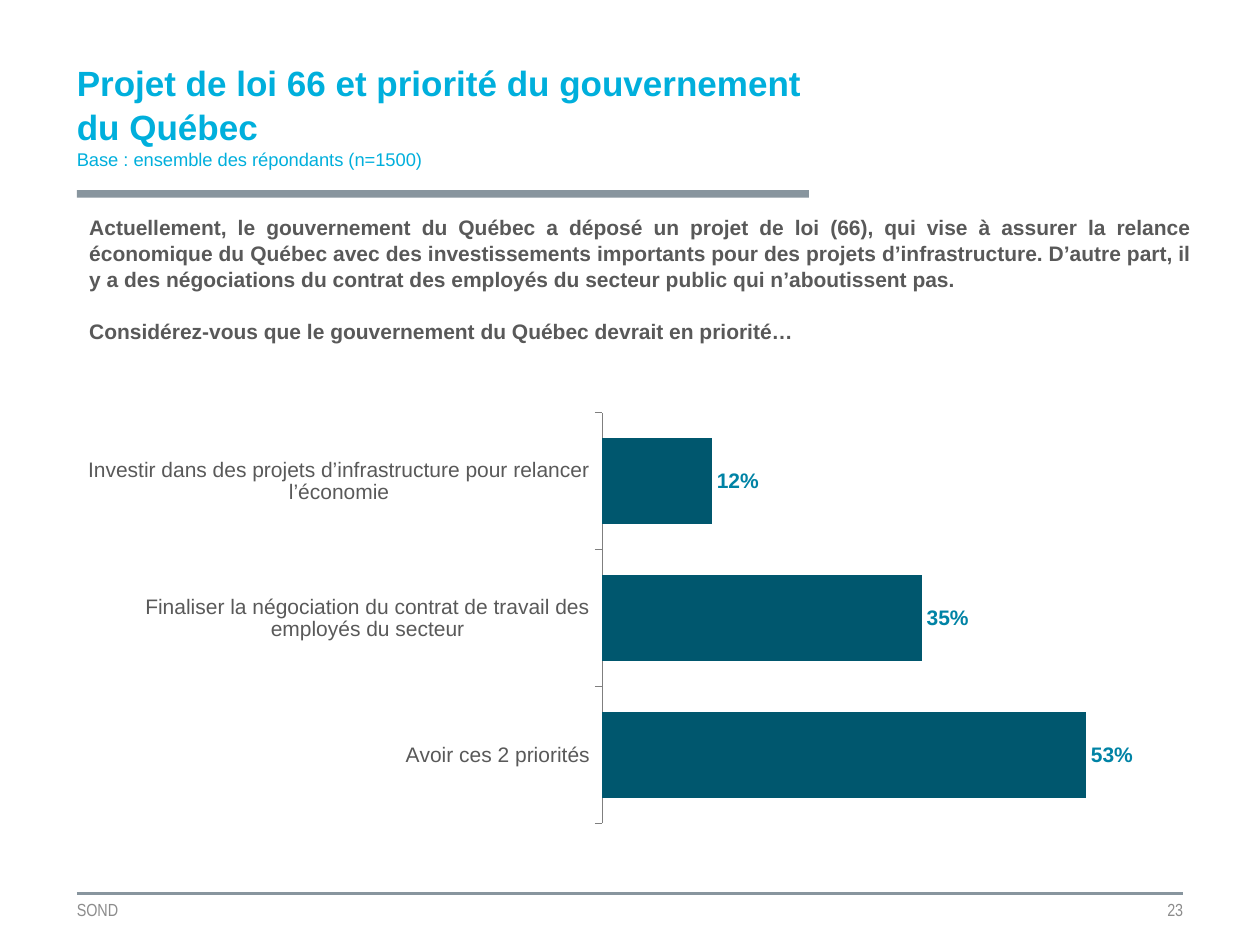
from lxml.etree import SubElement
from pptx import Presentation
from pptx.chart.data import CategoryChartData
from pptx.dml.color import RGBColor
from pptx.enum.chart import XL_CHART_TYPE, XL_LABEL_POSITION, XL_TICK_LABEL_POSITION, XL_TICK_MARK
from pptx.enum.shapes import MSO_CONNECTOR, MSO_SHAPE
from pptx.enum.text import MSO_ANCHOR, PP_ALIGN
from pptx.oxml import parse_xml
from pptx.oxml.ns import nsdecls, qn
from pptx.util import Inches, Pt

COLORS = {
    "title": "00AFDC",
    "rule": "88959E",
    "body": "595959",
    "footer": "8C8C8C",
    "axis": "7F7F7F",
    "bar": "00576E",
    "value": "0083A5",
}
LEFT, RIGHT = 0.61, 9.39
FOOTER_TOP = 7.09


def rgb(name):
    return RGBColor.from_string(COLORS[name])


def add_text(slide, paragraphs, left, top, width, height, color, font="Arial", inset=(0, 0),
             anchor=MSO_ANCHOR.TOP, align=PP_ALIGN.LEFT, line_spacing=1.0, space_before=0):
    """Add a text box; each paragraph is (text, size, bold)."""
    shape = slide.shapes.add_textbox(Inches(left), Inches(top), Inches(width), Inches(height))
    frame = shape.text_frame
    frame.word_wrap = True
    frame.vertical_anchor = anchor
    frame.margin_left = frame.margin_right = Inches(inset[0])
    frame.margin_top = frame.margin_bottom = Inches(inset[1])
    for index, (text, size, bold) in enumerate(paragraphs):
        paragraph = frame.add_paragraph() if index else frame.paragraphs[0]
        paragraph.alignment = align
        paragraph.line_spacing = line_spacing
        if index:
            paragraph.space_before = Pt(space_before)
        run = paragraph.add_run()
        run.text = text
        run.font.name = font
        run.font.size = Pt(size)
        run.font.bold = bold
        run.font.color.rgb = rgb(color)


presentation = Presentation()
presentation.slide_width = Inches(10)
presentation.slide_height = Inches(7.5)
slide = presentation.slides.add_slide(presentation.slide_layouts[6])

# Rules
footer_rule = slide.shapes.add_connector(
    MSO_CONNECTOR.STRAIGHT, Inches(LEFT), Inches(FOOTER_TOP), Inches(RIGHT), Inches(FOOTER_TOP))
footer_rule.line.color.rgb = rgb("rule")
footer_rule.line.width = Pt(1.5)
SubElement(footer_rule._element.spPr, qn("a:effectLst"))

title_rule = slide.shapes.add_shape(
    MSO_SHAPE.RECTANGLE, Inches(LEFT), Inches(1.51), Inches(5.81), Inches(0.06))
title_rule.shadow.inherit = False
title_rule.fill.solid()
title_rule.fill.fore_color.rgb = rgb("rule")
title_rule.line.fill.background()

# Footer
for text, left, align in [("SOND", LEFT, PP_ALIGN.LEFT), ("23", RIGHT - 2.8, PP_ALIGN.RIGHT)]:
    add_text(slide, [(text, 10, False)], left, FOOTER_TOP, 2.8, 0.26, "footer",
             font="Arial Narrow", anchor=MSO_ANCHOR.MIDDLE, align=align)

# Title and question
add_text(slide, [
    ("Projet de loi 66 et priorité du gouvernement du Québec", 20, True),
    ("Base : ensemble des répondants (n=1500)", 10.5, False),
], LEFT, 0.47, 5.94, 1.04, "title", line_spacing=1.05)

add_text(slide, [
    ("Actuellement, le gouvernement du Québec a déposé un projet de loi (66), qui vise à assurer "
     "la relance économique du Québec avec des investissements importants pour des projets "
     "d’infrastructure. D’autre part, il y a des négociations du contrat des employés du secteur "
     "public qui n’aboutissent pas.", 12, True),
    ("Considérez-vous que le gouvernement du Québec devrait en priorité…", 12, True),
], LEFT, 1.64, 8.95, 1.31, "body", inset=(0.1, 0.05), align=PP_ALIGN.JUSTIFY,
    line_spacing=1.05, space_before=14.4)

# Chart
chart_data = CategoryChartData(number_format="0%")
chart_data.categories = [
    "Investir dans des projets d’infrastructure pour relancer l’économie",
    "Finaliser la négociation du contrat de travail des employés du secteur",
    "Avoir ces 2 priorités",
]
chart_data.add_series("Series 1", [0.12, 0.35, 0.53])
chart = slide.shapes.add_chart(
    XL_CHART_TYPE.BAR_CLUSTERED, Inches(LEFT), Inches(3.2), Inches(8.69), Inches(3.79),
    chart_data).chart
chart.has_legend = False
chart.has_title = False
chart.font.name = "Arial"
chart.font.size = Pt(10.5)
chart.font.color.rgb = rgb("axis")

category_axis = chart.category_axis
category_axis.reverse_order = True
category_axis.has_major_gridlines = False
category_axis.major_tick_mark = XL_TICK_MARK.OUTSIDE
category_axis.tick_label_position = XL_TICK_LABEL_POSITION.LOW
category_axis.format.line.color.rgb = rgb("axis")
category_axis.tick_labels.font.name = "Arial"
category_axis.tick_labels.font.size = Pt(12)
category_axis.tick_labels.font.color.rgb = rgb("body")

value_axis = chart.value_axis
value_axis.visible = False
value_axis.has_major_gridlines = False
value_axis.minimum_scale = 0
value_axis.maximum_scale = 0.6
value_axis.major_unit = 0.2

plot = chart.plots[0]
plot.gap_width = 60
plot.vary_by_categories = False
series = plot.series[0]
series.format.fill.solid()
series.format.fill.fore_color.rgb = rgb("bar")

labels = series.data_labels
labels.show_value = True
labels.position = XL_LABEL_POSITION.OUTSIDE_END
labels.number_format = "0%"
labels.number_format_is_linked = False
labels.font.name = "Arial"
labels.font.size = Pt(12)
labels.font.bold = True
labels.font.color.rgb = rgb("value")

# Fixed inner plot area, as fractions of the chart
plot_area = chart._chartSpace.chart.plotArea
for layout in plot_area.findall(qn("c:layout")):
    plot_area.remove(layout)
plot_area.insert(0, parse_xml(
    f'<c:layout {nsdecls("c")}><c:manualLayout><c:layoutTarget val="inner"/>'
    '<c:xMode val="edge"/><c:yMode val="edge"/>'
    '<c:x val="0.48"/><c:y val="0.02"/><c:w val="0.5"/><c:h val="0.86"/>'
    '</c:manualLayout></c:layout>'))

presentation.save("out.pptx")
